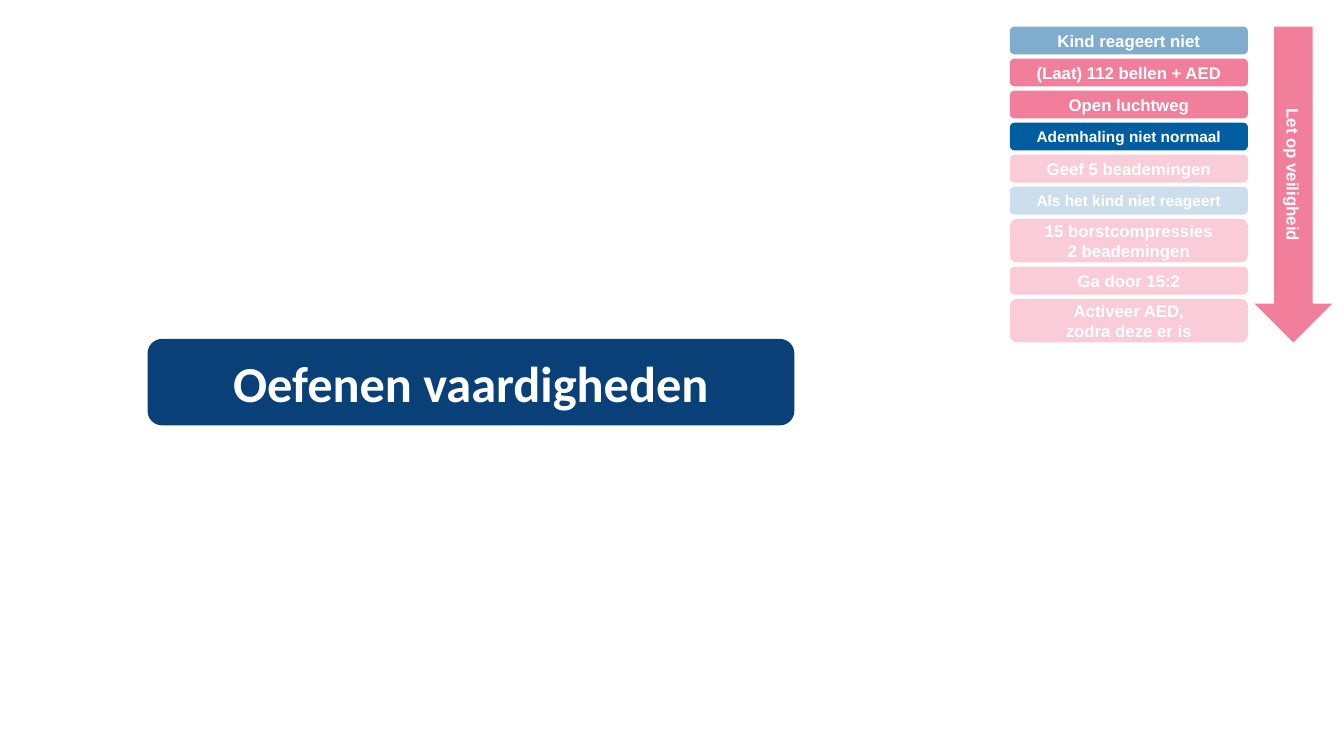
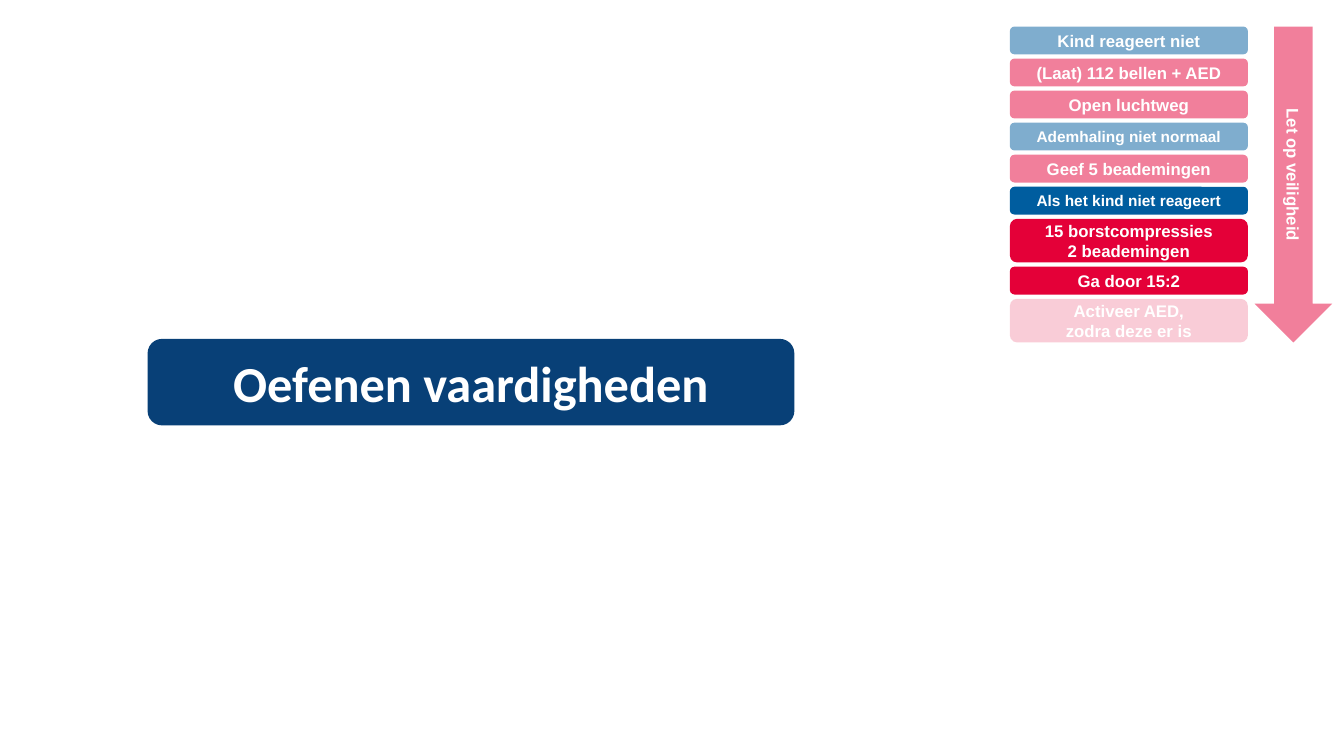
"""Build two practice slides with a child resuscitation flow chart."""
from lxml.etree import SubElement
from pptx import Presentation
from pptx.dml.color import RGBColor
from pptx.enum.shapes import MSO_SHAPE
from pptx.enum.text import MSO_ANCHOR, PP_ALIGN
from pptx.oxml.ns import qn
from pptx.util import Cm, Pt

NAVY, BLUE, RED, WHITE = "084077", "005D9F", "E40038", "FFFFFF"
FULL, DONE, LATER = 100, 50, 20
STEPS = [
    ("Kind reageert niet", BLUE, 12),
    ("(Laat) 112 bellen + AED", RED, 12),
    ("Open luchtweg", RED, 12),
    ("Ademhaling niet normaal", BLUE, 11),
    ("Geef 5 beademingen", RED, 12),
    ("Als het kind niet reageert", BLUE, 11),
    ("15 borstcompressies\n2 beademingen", RED, 12),
    ("Ga door 15:2", RED, 12),
    ("Activeer AED,\nzodra deze er is", RED, 12),
]
SLIDES = [
    [DONE] * 3 + [FULL] + [LATER] * 5,
    [DONE] * 5 + [FULL] * 3 + [LATER],
]


def rgb(value):
    """Return the colour for a hex string."""
    return RGBColor.from_string(value)


def add_block(shapes, kind, box, text, color, size, font="Arial", opacity=FULL):
    """Add a filled shape with bold white centred text; box is in cm."""
    s = shapes.add_shape(kind, *(Cm(v) for v in box))
    s.shadow.inherit = False
    s.fill.solid()
    s.fill.fore_color.rgb = rgb(color)
    s.line.fill.background()
    if opacity < FULL:
        clr = s.element.spPr.find(qn("a:solidFill")).find(qn("a:srgbClr"))
        SubElement(clr, qn("a:alpha")).set("val", str(opacity * 1000))
    tf = s.text_frame
    tf.margin_left = tf.margin_right = tf.margin_top = tf.margin_bottom = 0
    tf.word_wrap = True
    tf.vertical_anchor = MSO_ANCHOR.MIDDLE
    tf.text = text
    for p in tf.paragraphs:
        p.alignment = PP_ALIGN.CENTER
        for r in p.runs:
            r.font.name, r.font.size, r.font.bold = font, Pt(size), True
            r.font.color.rgb = rgb(WHITE)
    return s


def add_flow(slide, box, opacities):
    """Add the column of steps and the safety arrow inside the box."""
    left, top, width, height = box
    arrow_width, step_width = 1.95, 6.0
    shapes = slide.shapes.add_group_shape().shapes
    heights = [1.1 if "\n" in text else 0.7 for text, _, _ in STEPS]
    gap = (height - sum(heights)) / (len(STEPS) - 1)
    y = top
    for (text, color, size), h, opacity in zip(STEPS, heights, opacities):
        add_block(shapes, MSO_SHAPE.ROUNDED_RECTANGLE, (left, y, step_width, h),
                  text, color, size, opacity=opacity)
        y += h + gap
    arrow = add_block(shapes, MSO_SHAPE.DOWN_ARROW,
                      (left + width - arrow_width, top, arrow_width, height),
                      "Let op veiligheid", RED, 12, opacity=DONE)
    arrow.element.txBody.bodyPr.set("vert", "vert")


def add_practice_slide(prs, opacities):
    """Add a slide with the title block and the flow in its current state."""
    slide = prs.slides.add_slide(prs.slide_layouts[6])
    add_block(slide.shapes, MSO_SHAPE.ROUNDED_RECTANGLE, (3.72, 8.54, 16.3, 2.18),
              "Oefenen vaardigheden", NAVY, 36, font="Calibri")
    add_flow(slide, (25.45, 0.67, 8.12, 7.96), opacities)


def main():
    """Build and save the presentation."""
    prs = Presentation()
    prs.slide_width, prs.slide_height = Cm(33.87), Cm(19.05)
    for opacities in SLIDES:
        add_practice_slide(prs, opacities)
    prs.save("out.pptx")


if __name__ == "__main__":
    main()
